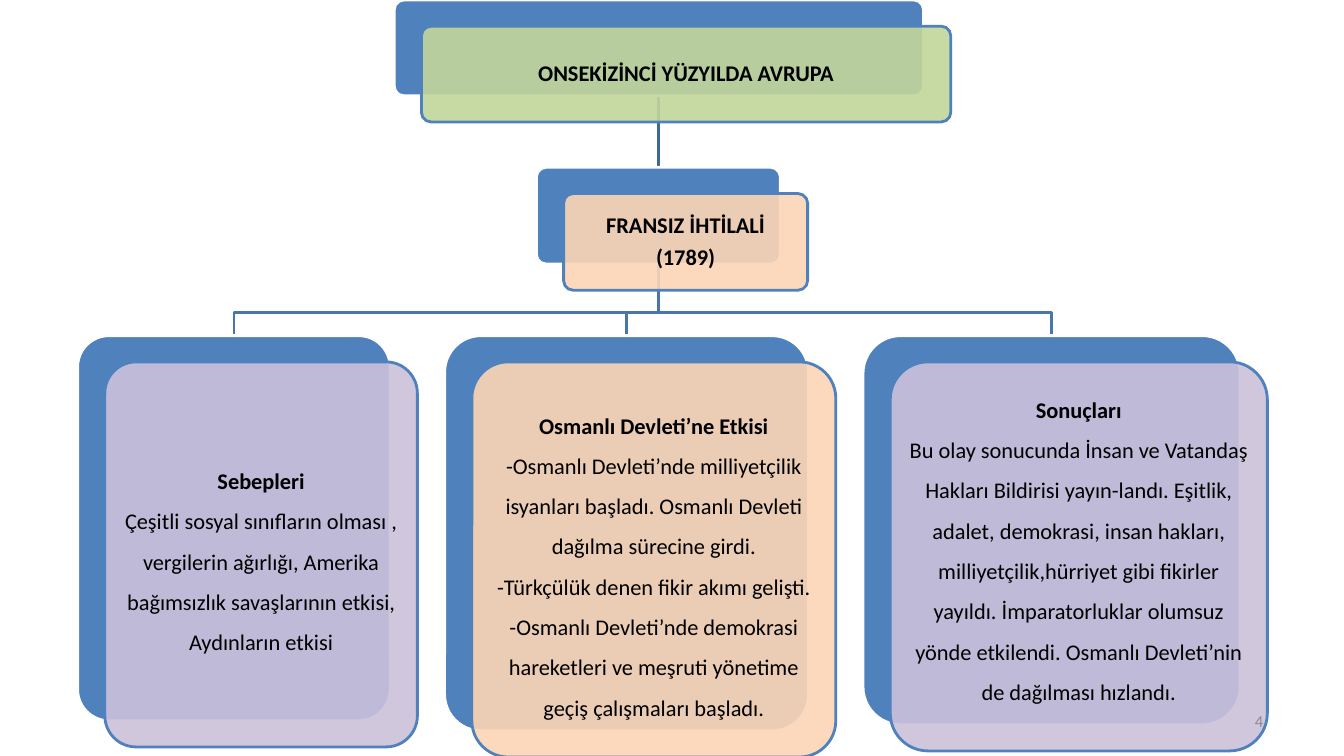
from lxml.etree import SubElement
from pptx import Presentation
from pptx.dml.color import RGBColor
from pptx.enum.shapes import MSO_CONNECTOR, MSO_SHAPE
from pptx.enum.text import MSO_ANCHOR, PP_ALIGN
from pptx.oxml.ns import qn
from pptx.util import Pt

PX = 9144
BLUE, GREEN, PEACH, LILAC = "4F81BD", "C3D69B", "FCD5B5", "CCC1DA"
BRANCH_LINE, STEM_LINE = "4875AC", "3F6797"
CARD_SHIFT = 27, 26
CARD_INSET = 7
TRUNK_X, COLUMN_TOP, BRANCH_Y = 653, 333, 310
HEADING = {"line_spacing": 0.9, "space_after": Pt(5.5)}
BODY = {"line_spacing": 1.5}

COLUMNS = [
    ((77, COLUMN_TOP, 310, 382), LILAC, 0, "Sebepleri", [
        "Çeşitli sosyal sınıfların olması , vergilerin ağırlığı, Amerika "
        "bağımsızlık savaşlarının etkisi, Aydınların etkisi"]),
    ((441, COLUMN_TOP, 361, 392), PEACH, 0, "Osmanlı Devleti’ne Etkisi", [
        "-Osmanlı Devleti’nde milliyetçilik isyanları başladı. Osmanlı Devleti "
        "dağılma sürecine girdi.",
        "-Türkçülük denen fikir akımı gelişti.",
        "-Osmanlı Devleti’nde demokrasi hareketleri ve meşruti yönetime geçiş "
        "çalışmaları başladı."]),
    ((856, COLUMN_TOP, 374, 386), LILAC, 25, "Sonuçları", [
        "Bu olay sonucunda İnsan ve Vatandaş Hakları Bildirisi yayın-landı. "
        "Eşitlik, adalet, demokrasi, insan hakları, milliyetçilik,hürriyet gibi "
        "fikirler yayıldı. İmparatorluklar olumsuz yönde etkilendi. Osmanlı "
        "Devleti’nin de dağılması hızlandı."]),
]


def color(value):
    """Return the colour of a hex string."""
    return RGBColor.from_string(value)


def assign(target, values):
    """Set each named value on the target."""
    for name, value in values.items():
        setattr(target, name, value)


def style_line(shape, line_color):
    """Give a shape or connector a two-point line."""
    shape.line.color.rgb = color(line_color)
    shape.line.width = Pt(2)


def write(shape, lines, insets, size, text_color, paragraph_format):
    """Write (text, bold) lines into a shape, centred vertically."""
    frame = shape.text_frame
    sides = ("margin_left", "margin_top", "margin_right", "margin_bottom")
    assign(frame, {"word_wrap": True, "vertical_anchor": MSO_ANCHOR.MIDDLE})
    assign(frame, {side: inset * PX for side, inset in zip(sides, insets)})
    for index, (text, bold) in enumerate(lines):
        paragraph = frame.add_paragraph() if index else frame.paragraphs[0]
        assign(paragraph, paragraph_format)
        run = paragraph.add_run()
        run.text = text
        assign(run.font, {"name": "Calibri", "size": Pt(size), "bold": bold})
        run.font.color.rgb = color(text_color)


def add_panel(slide, box, fill, line_color):
    """Add one rounded panel."""
    panel = slide.shapes.add_shape(
        MSO_SHAPE.ROUNDED_RECTANGLE, *(length * PX for length in box))
    panel.adjustments[0] = 0.1
    panel.shadow.inherit = False
    panel.fill.solid()
    panel.fill.fore_color.rgb = color(fill)
    style_line(panel, line_color)
    return panel


def add_card(slide, box, fill, lines, paragraph_format, extra_bottom=0):
    """Add a blue panel with a shifted translucent text panel over it."""
    left, top, width, height = box
    add_panel(slide, box, BLUE, "FFFFFF")
    front_box = left + CARD_SHIFT[0], top + CARD_SHIFT[1], width, height
    front = add_panel(slide, front_box, fill, BLUE)
    fill_color = front.fill._xPr.find(qn("a:solidFill"))[0]
    SubElement(fill_color, qn("a:alpha"), val="90000")
    insets = [CARD_INSET] * 3 + [CARD_INSET + extra_bottom]
    write(front, lines, insets, 16, "000000",
          {"alignment": PP_ALIGN.CENTER, **paragraph_format})


def add_stem(slide, x, top, bottom):
    """Add the straight line between the two heading cards."""
    stem = slide.shapes.add_connector(
        MSO_CONNECTOR.STRAIGHT, x * PX, top * PX, x * PX, bottom * PX)
    style_line(stem, STEM_LINE)
    SubElement(stem._element.spPr, qn("a:effectLst"))


def add_branch(slide, x, top, bottom):
    """Add a bent line from the trunk down to a column."""
    builder = slide.shapes.build_freeform(TRUNK_X, top, scale=PX)
    builder.add_line_segments(
        [(TRUNK_X, BRANCH_Y), (x, BRANCH_Y), (x, bottom)], close=False)
    branch = builder.convert_to_shape()
    branch.shadow.inherit = False
    branch.fill.background()
    style_line(branch, BRANCH_LINE)


def add_page_number(slide, box, number):
    """Add the grey page number."""
    shape = slide.shapes.add_textbox(*(length * PX for length in box))
    write(shape, [(number, False)], (14, 7, 14, 7), 12, "8C8C8C",
          {"alignment": PP_ALIGN.RIGHT})


def add_hierarchy(slide):
    """Add the tree of headings, lines and columns."""
    title_box, event_box = (391, 0, 525, 95), (532, 166, 242, 96)
    event_bottom = event_box[1] + event_box[3]
    for (left, top, width, _), *_ in reversed(COLUMNS):
        add_branch(slide, left + width // 2, event_bottom, top)
    add_stem(slide, TRUNK_X, title_box[3], event_box[1])
    add_card(slide, title_box, GREEN,
             [("ONSEKİZİNCİ YÜZYILDA AVRUPA", True)], HEADING)
    add_card(slide, event_box, PEACH,
             [("FRANSIZ İHTİLALİ", True), ("(1789)", True)], HEADING)
    for box, fill, extra_bottom, heading, texts in COLUMNS:
        lines = [(heading, True)] + [(text, False) for text in texts]
        add_card(slide, box, fill, lines, BODY, extra_bottom)


def main():
    """Build and save the presentation."""
    presentation = Presentation()
    assign(presentation, {"slide_width": 1333 * PX, "slide_height": 750 * PX})
    slide = presentation.slides.add_slide(presentation.slide_layouts[6])
    add_hierarchy(slide)
    add_page_number(slide, (956, 695, 311, 40), "4")
    presentation.save("out.pptx")


if __name__ == "__main__":
    main()
